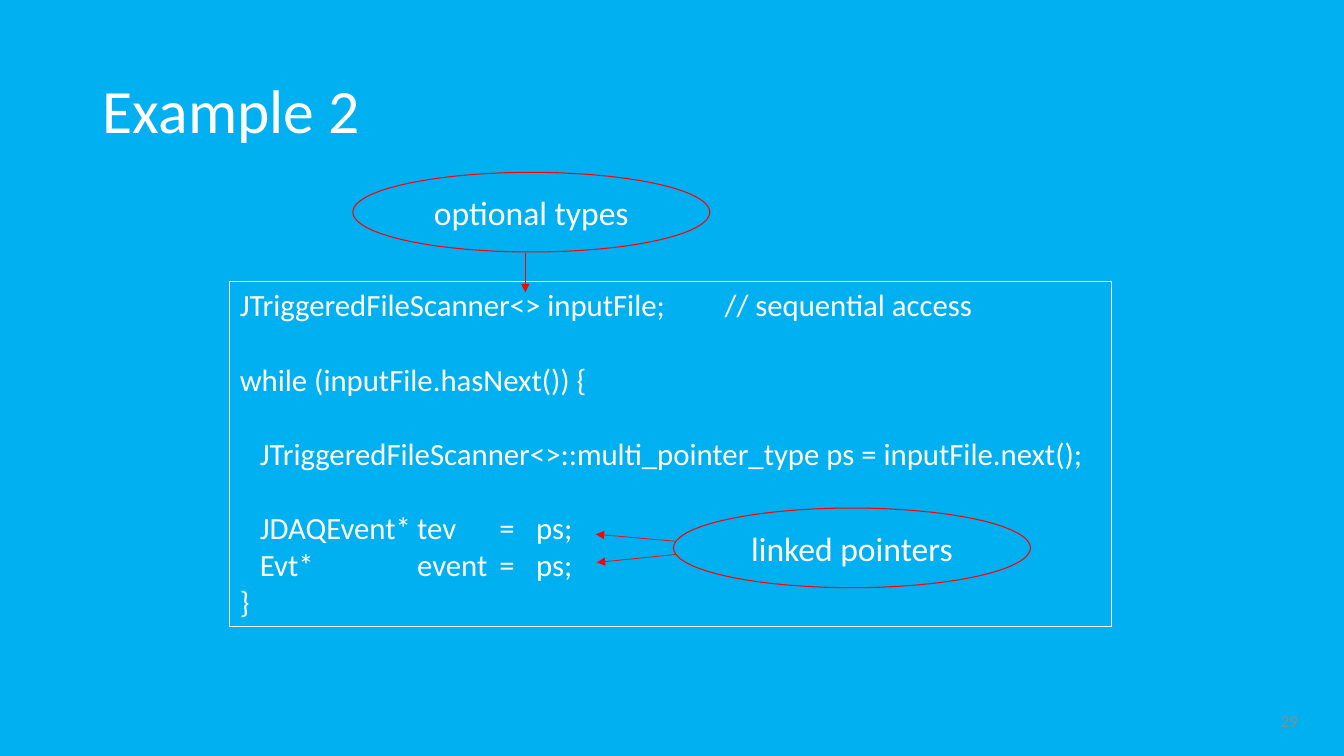
from dataclasses import dataclass

from lxml import etree
from pptx import Presentation
from pptx.dml.color import RGBColor
from pptx.enum import shapes, text
from pptx.oxml import ns
from pptx.util import Inches, Pt


@dataclass(frozen=True)
class Theme:
    font: str = "Calibri"
    background: RGBColor = RGBColor(0x00, 0xB0, 0xF0)
    ink: RGBColor = RGBColor(0xFF, 0xFF, 0xFF)
    accent: RGBColor = RGBColor(0xFF, 0x00, 0x00)
    muted: RGBColor = RGBColor(0x8C, 0x8C, 0x8C)
    title_size: int = 44
    callout_size: int = 24
    code_size: int = 22
    number_size: int = 12
    outline: float = 0.75
    arrow: float = 0.5


THEME = Theme()

# Code lines, each with the number of empty lines above it
CODE = [
    ("JTriggeredFileScanner<> inputFile;\t// sequential access", 0),
    ("while (inputFile.hasNext()) {", 1),
    ("\tJTriggeredFileScanner<>::multi_pointer_type ps = inputFile.next();", 1),
    ("\tJDAQEvent*\ttev\t=\tps;", 1),
    ("\tEvt*\tevent\t=\tps;", 0),
    ("}", 0),
]
CODE_LINE_HEIGHT = 26.6
CODE_TABS = [(0.2, "l"), (1.76, "l"), (2.65, "ctr"), (2.94, "l"), (4.81, "l")]

CALLOUT_SIZE = (3.54, 0.79)
CALLOUTS = [("optional types", 3.5, 1.71), ("linked pointers", 6.68, 5.04)]

# Start and tip of each arrow
ARROWS = [
    ((5.21, 2.51), (5.21, 2.9)),
    ((6.71, 5.5), (5.92, 5.58)),
    ((6.7, 5.37), (5.91, 5.3)),
]


def inches(*lengths):
    return [Inches(length) for length in lengths]


def add_run(paragraph, words, size, color=THEME.ink):
    run = paragraph.add_run()
    run.text = words
    run.font.name = THEME.font
    run.font.size = Pt(size)
    run.font.color.rgb = color


def set_line(line, color, width):
    line.color.rgb = color
    line.width = Pt(width)


def set_title(slide, words):
    title = slide.shapes.title
    title.left, title.top, title.width, title.height = inches(0.92, 0.4, 11.5, 1.45)
    title.text_frame.vertical_anchor = text.MSO_ANCHOR.MIDDLE
    paragraph = title.text_frame.paragraphs[0]
    paragraph.alignment = text.PP_ALIGN.LEFT
    paragraph.line_spacing = 0.9
    add_run(paragraph, words, THEME.title_size)


def add_page_number(slide, number):
    frame = slide.shapes.add_textbox(*inches(9.97, 6.95, 3, 0.4)).text_frame
    frame.word_wrap = True
    frame.vertical_anchor = text.MSO_ANCHOR.MIDDLE
    paragraph = frame.paragraphs[0]
    paragraph.alignment = text.PP_ALIGN.RIGHT
    add_run(paragraph, number, THEME.number_size, THEME.muted)


def add_tabs(paragraph, stops):
    tab_list = etree.SubElement(paragraph._p.get_or_add_pPr(), ns.qn("a:tabLst"))
    for position, alignment in stops:
        etree.SubElement(tab_list, ns.qn("a:tab"),
                         pos=str(Inches(position)), algn=alignment)


def add_code(slide, lines):
    listing = slide.shapes.add_textbox(*inches(2.28, 2.79, 8.74, 3.43))
    set_line(listing.line, THEME.ink, THEME.outline)
    frame = listing.text_frame
    frame.word_wrap = True
    for index, (code, gap) in enumerate(lines):
        paragraph = frame.add_paragraph() if index else frame.paragraphs[0]
        paragraph.space_before = Pt(gap * CODE_LINE_HEIGHT)
        add_tabs(paragraph, CODE_TABS)
        add_run(paragraph, code, THEME.code_size)


def add_callout(slide, words, left, top):
    callout = slide.shapes.add_shape(shapes.MSO_SHAPE.OVAL,
                                     *inches(left, top, *CALLOUT_SIZE))
    callout.shadow.inherit = False
    callout.fill.background()
    set_line(callout.line, THEME.accent, THEME.outline)
    frame = callout.text_frame
    frame.margin_left = frame.margin_right = frame.margin_top = frame.margin_bottom = 0
    frame.vertical_anchor = text.MSO_ANCHOR.MIDDLE
    paragraph = frame.paragraphs[0]
    paragraph.alignment = text.PP_ALIGN.CENTER
    add_run(paragraph, words, THEME.callout_size)


def add_arrow(slide, start, tip):
    arrow = slide.shapes.add_connector(shapes.MSO_CONNECTOR.STRAIGHT,
                                       *inches(*start, *tip))
    set_line(arrow.line, THEME.accent, THEME.arrow)
    etree.SubElement(arrow.line._get_or_add_ln(), ns.qn("a:tailEnd"), type="triangle")
    etree.SubElement(arrow._element.spPr, ns.qn("a:effectLst"))


def main():
    deck = Presentation()
    deck.slide_width, deck.slide_height = inches(13.33, 7.5)
    slide = deck.slides.add_slide(deck.slide_layouts.get_by_name("Title Only"))
    slide.background.fill.solid()
    slide.background.fill.fore_color.rgb = THEME.background

    # Title and page number
    set_title(slide, "Example 2")
    add_page_number(slide, "29")

    # Code listing with its annotations
    add_code(slide, CODE)
    for callout in CALLOUTS:
        add_callout(slide, *callout)
    for start, tip in ARROWS:
        add_arrow(slide, start, tip)

    deck.save("out.pptx")


if __name__ == "__main__":
    main()
